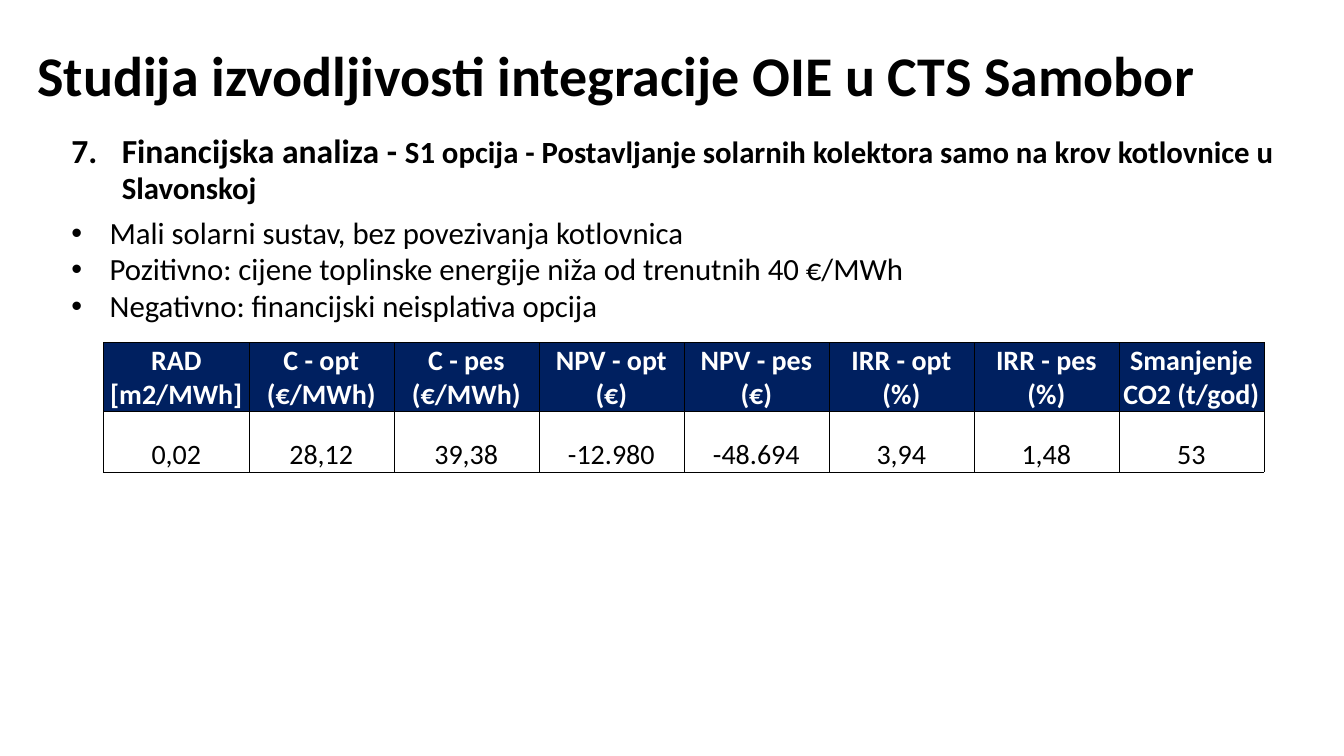
from lxml.etree import SubElement
from pptx import Presentation
from pptx.dml.color import RGBColor
from pptx.enum.text import MSO_ANCHOR as Anchor, PP_ALIGN as Align
from pptx.oxml import parse_xml
from pptx.oxml.ns import nsdecls, qn
from pptx.util import Pt

FONT = "Calibri"
COLORS = {"text": "000000", "header": "002060", "header_text": "FFFFFF", "border": "000000"}
TITLE = "Studija izvodljivosti integracije OIE u CTS Samobor"
HEADING = [
    ("Financijska analiza - ", 24),
    ("S1 opcija - Postavljanje solarnih kolektora samo na krov kotlovnice u Slavonskoj", 22),
]
POINTS = [
    "Mali solarni sustav, bez povezivanja kotlovnica",
    "Pozitivno: cijene toplinske energije niža od trenutnih 40 €/MWh",
    "Negativno: financijski neisplativa opcija",
]
RESULTS = [
    ("RAD [m2/MWh]", "0,02"),
    ("C - opt (€/MWh)", "28,12"),
    ("C - pes (€/MWh)", "39,38"),
    ("NPV - opt (€)", "-12.980"),
    ("NPV - pes (€)", "-48.694"),
    ("IRR - opt (%)", "3,94"),
    ("IRR - pes (%)", "1,48"),
    ("Smanjenje CO2 (t/god)", "53"),
]


def add_span(para, text, size, color="text", bold=False):
    span = para.add_run()
    span.text = text
    span.font.name = FONT
    span.font.size = Pt(size)
    span.font.bold = bold
    span.font.color.rgb = RGBColor.from_string(COLORS[color])


def set_bullet(para, margin, hanging, kind, **attributes):
    props = para._p.get_or_add_pPr()
    props.set("marL", str(Pt(margin)))
    props.set("indent", str(-Pt(hanging)))
    if kind == "buChar":
        SubElement(props, qn("a:buFont"), typeface="Arial")
    SubElement(props, qn(f"a:{kind}"), **attributes)


def fill_title(title):
    title.left, title.top, title.width, title.height = Pt(19.44), Pt(3.6), Pt(926.64), Pt(104.4)
    title.text_frame.vertical_anchor = Anchor.MIDDLE
    para = title.text_frame.paragraphs[0]
    para.alignment = Align.LEFT
    para.line_spacing = 0.9
    add_span(para, TITLE, 40, bold=True)


def add_body(page):
    box = page.shapes.add_textbox(Pt(43.2), Pt(91.44), Pt(892.8), Pt(370.08))
    frame = box.text_frame
    frame.word_wrap = True
    heading = frame.paragraphs[0]
    heading.line_spacing = 0.95
    heading.space_after = Pt(6)
    set_bullet(heading, 36.72, 36, "buAutoNum", type="arabicPeriod", startAt="7")
    for text, size in HEADING:
        add_span(heading, text, size, bold=True)
    for point in POINTS:
        para = frame.add_paragraph()
        para.line_spacing = 0.95
        para.space_before = Pt(1)
        set_bullet(para, 28.08, 27.36, "buChar", char="•")
        add_span(para, point, 22)


def set_borders(cell):
    props = cell._tc.get_or_add_tcPr()
    for index, side in enumerate("LRTB"):
        props.insert(index, parse_xml(
            f'<a:ln{side} {nsdecls("a")} w="{Pt(0.5)}"><a:solidFill>'
            f'<a:srgbClr val="{COLORS["border"]}"/></a:solidFill></a:ln{side}>'))


def fill_cell(cell, text, is_header):
    cell.margin_left = cell.margin_right = cell.margin_top = Pt(0.72)
    cell.margin_bottom = 0
    cell.vertical_anchor = Anchor.BOTTOM
    if is_header:
        cell.fill.solid()
        cell.fill.fore_color.rgb = RGBColor.from_string(COLORS["header"])
    else:
        cell.fill.background()
    set_borders(cell)
    para = cell.text_frame.paragraphs[0]
    para.alignment = Align.CENTER
    add_span(para, text, 20, "header_text" if is_header else "text", is_header)


def add_results(page):
    heights = (47.5, 43.5)
    frame = page.shapes.add_table(len(heights), len(RESULTS), Pt(74.16), Pt(244.8),
                                  Pt(828.72), Pt(sum(heights)))
    table = frame.table
    table.first_row = table.horz_banding = False
    for row, height in zip(table.rows, heights):
        row.height = Pt(height)
    for column, texts in enumerate(RESULTS):
        table.columns[column].width = Pt(828.72 / len(RESULTS))
        for row, text in enumerate(texts):
            fill_cell(table.cell(row, column), text, is_header=row == 0)


def main():
    deck = Presentation()
    deck.slide_width, deck.slide_height = Pt(960), Pt(540)
    page = deck.slides.add_slide(deck.slide_layouts[5])
    fill_title(page.shapes.title)
    add_body(page)
    add_results(page)
    deck.save("out.pptx")


if __name__ == "__main__":
    main()
